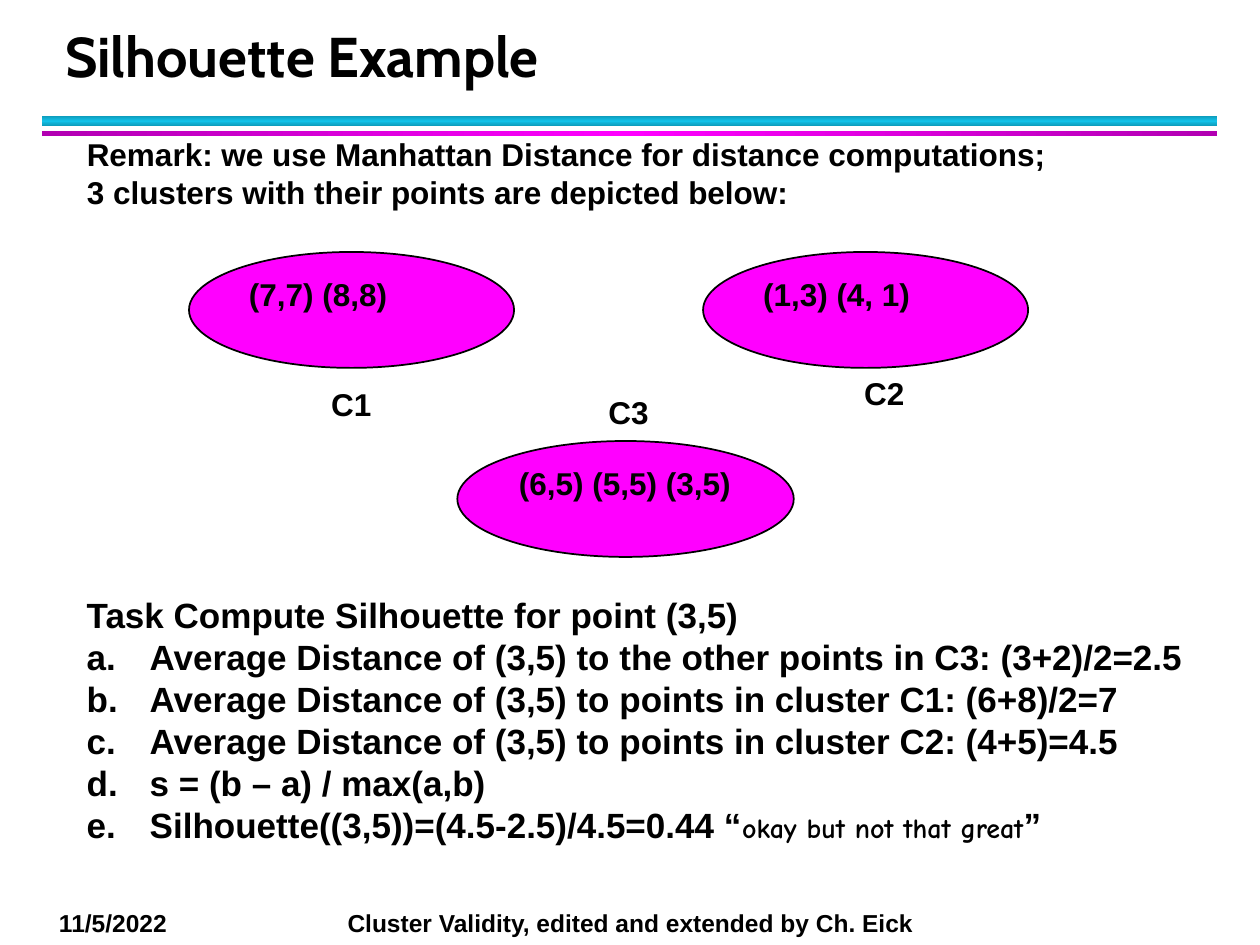
from copy import deepcopy

from lxml.etree import SubElement
from pptx import Presentation
from pptx.dml.color import RGBColor
from pptx.enum.shapes import MSO_SHAPE
from pptx.enum.text import MSO_ANCHOR, PP_ALIGN
from pptx.oxml.ns import qn
from pptx.util import Inches, Pt


def rgb(value):
    return RGBColor.from_string(value)


class SlideBuilder:
    font = "Arial"
    ink = "000000"
    magenta = "FF00FF"

    def __init__(self, slide):
        self.s = slide

    def shape(self, kind, box):
        sp = self.s.shapes.add_shape(kind, *map(Inches, box))
        sp.shadow.inherit = False
        return sp

    def band(self, box, edge, middle, angle):
        sp = self.shape(MSO_SHAPE.RECTANGLE, box)
        sp.line.fill.background()
        sp.fill.gradient()
        sp.fill.gradient_angle = angle
        stop_list = sp.fill._xPr.find(".//" + qn("a:gsLst"))
        stop_list.append(deepcopy(stop_list[0]))
        for stop, color, position in zip(sp.fill.gradient_stops, (edge, middle, edge), (0, 0.5, 1)):
            stop.color.rgb = rgb(color)
            stop.position = position

    def run(self, p, text, size, font=None):
        r = p.add_run()
        r.text = text
        style = {"name": font or self.font, "size": Pt(size), "bold": True}
        for name, value in style.items():
            setattr(r.font, name, value)
        r.font.color.rgb = rgb(self.ink)

    def cluster(self, box, points):
        sp = self.shape(MSO_SHAPE.OVAL, box)
        sp.fill.solid()
        sp.fill.fore_color.rgb = rgb(self.magenta)
        sp.line.color.rgb = rgb(self.ink)
        sp.line.width = Pt(1)
        tf = sp.text_frame
        tf.vertical_anchor = MSO_ANCHOR.TOP
        p = tf.paragraphs[0]
        p.alignment = PP_ALIGN.LEFT
        self.run(p, points, 18)

    def text(self, box, lines, size, font=None, wrap=True, anchor=MSO_ANCHOR.TOP):
        tf = self.s.shapes.add_textbox(*map(Inches, box)).text_frame
        tf.word_wrap = wrap
        tf.vertical_anchor = anchor
        for i, line in enumerate(lines):
            p = tf.add_paragraph() if i else tf.paragraphs[0]
            self.run(p, line, size, font)
        return tf

    def letter(self, p):
        pPr = p._p.get_or_add_pPr()
        pPr.set("marL", str(Inches(0.5)))
        pPr.set("indent", str(Inches(-0.5)))
        SubElement(pPr, qn("a:buFont"), typeface=self.font)
        SubElement(pPr, qn("a:buAutoNum"), type="alphaLcPeriod")

    def tab(self, p, position):
        tabs = SubElement(p._p.get_or_add_pPr(), qn("a:tabLst"))
        SubElement(tabs, qn("a:tab"), pos=str(Inches(position)), algn="l")


def main():
    prs = Presentation()
    prs.slide_width, prs.slide_height = Inches(10), Inches(7.5)
    b = SlideBuilder(prs.slides.add_slide(prs.slide_layouts[6]))

    b.band((0.33, 0.92, 9.33, 0.08), "0E9BBA", "12C2E9", 90)
    b.band((0.33, 1.04, 9.33, 0.04), "B200B2", b.magenta, 0)

    footer = b.text((0.37, 7.16, 9.33, 0.34),
                    ["11/5/2022\tCluster Validity, edited and extended by Ch. Eick"], 14)
    b.tab(footer.paragraphs[0], 2.29)

    title = b.text((0.42, 0.17, 9.06, 0.58), ["Silhouette Example"], 32, "Cabin",
                   anchor=MSO_ANCHOR.BOTTOM)
    title.paragraphs[0].line_spacing = Pt(36)

    clusters = [
        ("C1", (2.53, 3.01), (1.5, 2, 2.58, 0.92), "(7,7) (8,8)"),
        ("C2", (6.76, 2.92), (5.58, 2, 2.58, 0.92), "(1,3) (4, 1)"),
        ("C3", (4.73, 3.07), (3.63, 3.5, 2.67, 0.92), "(6,5) (5,5) (3,5)"),
    ]
    for name, corner, box, points in clusters:
        b.cluster(box, points)
        b.text((*corner, 0.52, 0.4), [name], 18, wrap=False)

    b.text((0.59, 1.02, 9.42, 0.71), [
        "Remark: we use Manhattan Distance for distance computations;",
        "3 clusters with their points are depicted below:",
    ], 18)

    task = b.text((0.59, 4.66, 8.96, 2.12), [
        "Task Compute Silhouette for point (3,5)",
        "Average Distance of (3,5) to the other points in C3: (3+2)/2=2.5",
        "Average Distance of (3,5) to points in cluster C1: (6+8)/2=7",
        "Average Distance of (3,5) to points in cluster C2: (4+5)=4.5",
        "s = (b – a) / max(a,b)",
        "Silhouette((3,5))=(4.5-2.5)/4.5=0.44 “",
    ], 20, wrap=False)
    for p in task.paragraphs[1:]:
        b.letter(p)
    verdict = task.paragraphs[-1]
    b.run(verdict, "okay but not that great", 16, "Comic Neue")
    b.run(verdict, "”", 20)

    prs.save("out.pptx")


if __name__ == "__main__":
    main()
